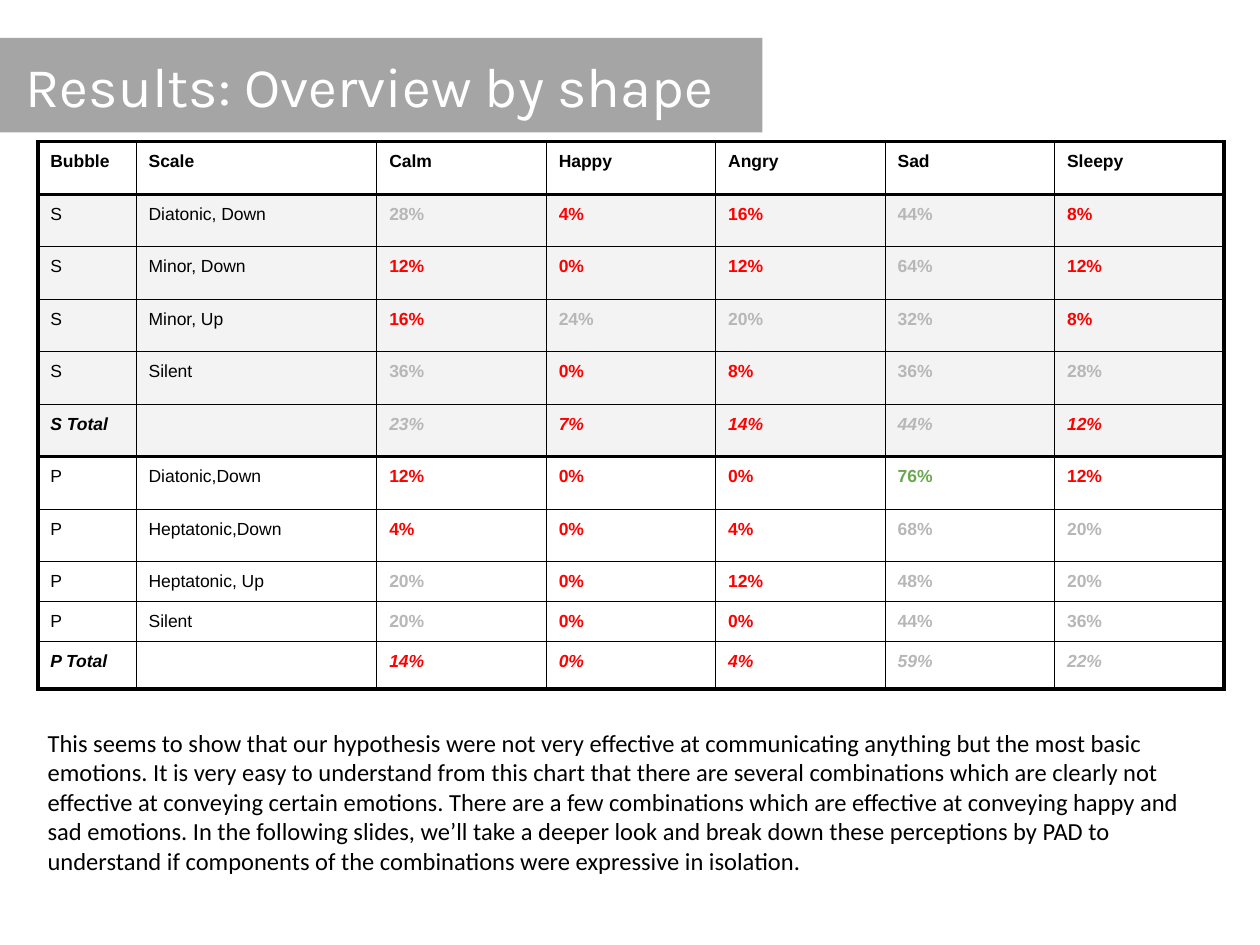
from lxml.etree import SubElement
from pptx import Presentation
from pptx.dml.color import RGBColor
from pptx.enum.shapes import MSO_SHAPE as Shape
from pptx.enum.text import MSO_ANCHOR as Anchor, PP_ALIGN as Align
from pptx.oxml.ns import qn
from pptx.util import Inches, Pt

BLACK = RGBColor(0x00, 0x00, 0x00)
WHITE = RGBColor(0xFF, 0xFF, 0xFF)
BANNER_GREY = RGBColor(0xA5, 0xA5, 0xA5)
BAND_GREY = RGBColor(0xF3, 0xF3, 0xF3)
MUTED = RGBColor(0xB7, 0xB7, 0xB7)
RED = RGBColor(0xFF, 0x00, 0x00)
GREEN = RGBColor(0x6A, 0xA8, 0x4F)


def write(frame, text, color, frame_format, font_format):
    for key, value in frame_format.items():
        setattr(frame, key, value)
    paragraph = frame.paragraphs[0]
    paragraph.alignment = Align.LEFT
    if not text:
        paragraph._p.get_or_add_endParaRPr().set("sz", str(int(font_format["size"].pt * 100)))
        return
    run = paragraph.add_run()
    run.text = text
    run.font.color.rgb = color
    for key, value in font_format.items():
        setattr(run.font, key, value)


def draw_borders(cell, widths):
    properties = cell._tc.get_or_add_tcPr()
    for side, width in widths.items():
        line = SubElement(properties, qn(f"a:ln{side}"), w=str(Pt(width)))
        fill = SubElement(line, qn("a:solidFill"))
        SubElement(fill, qn("a:srgbClr"), val=str(BLACK))


deck = Presentation()
deck.slide_width, deck.slide_height = Inches(10), Inches(7.5)
W, H = deck.slide_width, deck.slide_height
slide = deck.slides.add_slide(deck.slide_layouts[6])

results = [
    ("Bubble", "Scale", "Calm", "Happy", "Angry", "Sad", "Sleepy"),
    ("S", "Diatonic, Down", 28, 4, 16, 44, 8),
    ("S", "Minor, Down", 12, 0, 12, 64, 12),
    ("S", "Minor, Up", 16, 24, 20, 32, 8),
    ("S", "Silent", 36, 0, 8, 36, 28),
    ("S Total", "", 23, 7, 14, 44, 12),
    ("P", "Diatonic,Down", 12, 0, 0, 76, 12),
    ("P", "Heptatonic,Down", 4, 0, 4, 68, 20),
    ("P", "Heptatonic, Up", 20, 0, 12, 48, 20),
    ("P", "Silent", 20, 0, 0, 44, 36),
    ("P Total", "", 14, 0, 4, 59, 22),
]
column_shares = [7.8, 19.1] + [13.45] * 5
row_shares = [1] * 8 + [0.76, 0.76, 0.91]
row_unit = H / 18
thin, thick = 0.75, 2.25
heavy_rules = {0, 1, 6, len(results)}
heavy_columns = {0, len(column_shares)}

grid = slide.shapes.add_table(
    len(results), len(column_shares), int(W * 0.03), int(H * 0.15),
    int(W * sum(column_shares) / 100), int(row_unit * sum(row_shares)),
).table
grid.first_row = grid.horz_banding = False
for column, share in zip(grid.columns, column_shares):
    column.width = int(W * share / 100)
for row, share in zip(grid.rows, row_shares):
    row.height = int(row_unit * share)

cell_margins = {"margin_left": Inches(0.1), "margin_right": Inches(0.1),
                "margin_top": Inches(0.08), "margin_bottom": Inches(0.08)}
for r, record in enumerate(results):
    is_total = record[0].endswith("Total")
    for c, value in enumerate(record):
        cell = grid.cell(r, c)
        is_score = isinstance(value, int)
        color = BLACK
        if is_score:
            color = RED if value < 20 else GREEN if value > 70 else MUTED
        draw_borders(cell, {
            "L": thick if c in heavy_columns else thin,
            "R": thick if c + 1 in heavy_columns else thin,
            "T": thick if r in heavy_rules else thin,
            "B": thick if r + 1 in heavy_rules else thin,
        })
        if record[0].startswith("S"):
            cell.fill.solid()
            cell.fill.fore_color.rgb = BAND_GREY
        else:
            cell.fill.background()
        for key, margin in cell_margins.items():
            setattr(cell, key, margin)
        write(cell.text_frame, f"{value}%" if is_score else value, color, {},
              {"name": "Arial", "size": Pt(10), "italic": is_total,
               "bold": is_score or is_total or r == 0})

banner = slide.shapes.add_shape(
    Shape.RECTANGLE, 0, int(H * 0.04), int(W * 0.605), int(H * 0.1))
banner.shadow.inherit = False
banner.fill.solid()
banner.fill.fore_color.rgb = BANNER_GREY
banner.line.fill.background()
write(banner.text_frame, " Results: Overview by shape", WHITE,
      {"word_wrap": True, "vertical_anchor": Anchor.MIDDLE},
      {"name": "Karla", "size": Pt(32)})

conclusion = slide.shapes.add_textbox(
    int(W * 0.028), int(H * 0.757), int(W * 0.943), int(H * 0.2))
write(conclusion.text_frame,
      "This seems to show that our hypothesis were not very effective at communicating "
      "anything but the most basic emotions. It is very easy to understand from this chart "
      "that there are several combinations which are clearly not effective at conveying "
      "certain emotions. There are a few combinations which are effective at conveying happy "
      "and sad emotions. In the following slides, we’ll take a deeper look and break down "
      "these perceptions by PAD to understand if components of the combinations were "
      "expressive in isolation.",
      BLACK,
      {"word_wrap": True, "margin_left": Inches(0.1), "margin_right": Inches(0.1),
       "margin_top": Inches(0.1), "margin_bottom": Inches(0.1)},
      {"name": "Calibri", "size": Pt(14)})

deck.save("out.pptx")
